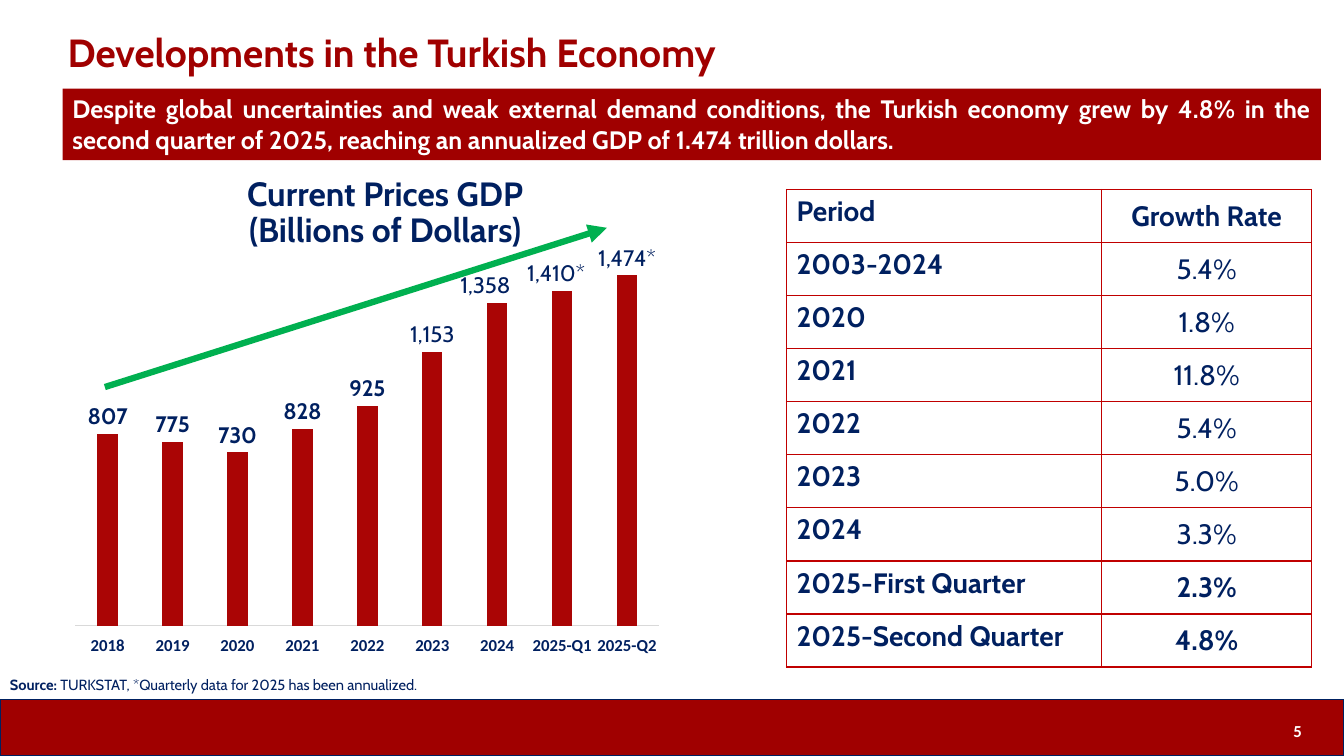
from lxml import etree
from pptx import Presentation
from pptx.chart.data import CategoryChartData
from pptx.dml.color import RGBColor
from pptx.enum.chart import XL_CHART_TYPE, XL_LABEL_POSITION, XL_TICK_LABEL_POSITION, XL_TICK_MARK
from pptx.enum.shapes import MSO_CONNECTOR, MSO_SHAPE
from pptx.enum.text import MSO_ANCHOR, PP_ALIGN
from pptx.oxml import parse_xml
from pptx.oxml.ns import nsdecls, qn
from pptx.util import Inches, Pt

COLUMN = XL_CHART_TYPE.COLUMN_CLUSTERED
ABOVE = XL_LABEL_POSITION.OUTSIDE_END
LOW = XL_TICK_LABEL_POSITION.LOW
NO_TICK = XL_TICK_MARK.NONE
STRAIGHT = MSO_CONNECTOR.STRAIGHT
RECT, TAB = MSO_SHAPE.RECTANGLE, MSO_SHAPE.ROUND_2_SAME_RECTANGLE
TOP, MIDDLE = MSO_ANCHOR.TOP, MSO_ANCHOR.MIDDLE
LEFT, CENTER, JUSTIFY = PP_ALIGN.LEFT, PP_ALIGN.CENTER, PP_ALIGN.JUSTIFY

COLORS = {"red": "A00000", "bar": "AA0505", "grid": "C00000", "navy": "002060",
          "green": "00B050", "axis": "D9D9D9", "white": "FFFFFF"}
HEAD, BODY = "Cabin", "Calibri"

GDP = [("2018", 807), ("2019", 775), ("2020", 730), ("2021", 828), ("2022", 925),
       ("2023", 1153), ("2024", 1358), ("2025-Q1", 1410), ("2025-Q2", 1474)]
NOTES = {5: "1,153", 6: "1,358", 7: "1,410*", 8: "1,474*"}
SHIFTS = {6: -0.02, 7: -0.01}
RATES = [("Period", "Growth Rate"), ("2003-2024", "5.4%"), ("2020", "1.8%"),
         ("2021", "11.8%"), ("2022", "5.4%"), ("2023", "5.0%"), ("2024", "3.3%"),
         ("2025-First Quarter", "2.3%"), ("2025-Second Quarter", "4.8%")]


def color(name):
    return RGBColor.from_string(COLORS[name])


def style(font, size, tint="navy", bold=True, face=HEAD):
    font.size, font.bold, font.name = Pt(size), bold, face
    font.color.rgb = color(tint)


def write(frame, text, size, tint="navy", bold=True, face=HEAD,
          align=LEFT, anchor=TOP, space=None):
    frame.word_wrap = True
    frame.vertical_anchor = anchor
    para = frame.paragraphs[0]
    para.text = text
    para.alignment = align
    para.line_spacing = space
    for run in para.runs:
        style(run.font, size, tint, bold, face)
    return para


def add_text(slide, box, text, size, **look):
    frame = slide.shapes.add_textbox(*map(Inches, box)).text_frame
    return write(frame, text, size, **look)


def add_block(slide, kind, box, fill=None, line=None):
    shape = slide.shapes.add_shape(kind, *map(Inches, box))
    shape.shadow.inherit = False
    if fill:
        shape.fill.solid()
        shape.fill.fore_color.rgb = color(fill)
    else:
        shape.fill.background()
    if line:
        shape.line.color.rgb = color(line)
        shape.line.width = Pt(1)
    else:
        shape.line.fill.background()
    return shape


def add_foot(slide, box, page):
    x, y, w, h = box
    add_block(slide, RECT, box, "red", "navy")
    tab = add_block(slide, TAB, (x + w - 0.7, y, 0.48, h + 0.03))
    write(tab.text_frame, page, 12, "white", face=BODY, align=CENTER, anchor=MIDDLE)


def add_head(slide, box):
    x, y, w, h = box
    title = slide.shapes.add_textbox(*map(Inches, (x, y, 8.62, 1.08)))
    frame = title.text_frame
    frame.margin_left = frame.margin_right = Inches(0.05)
    write(frame, "Developments in the Turkish Economy", 28, "red", anchor=MIDDLE, space=0.9)
    band = add_block(slide, RECT, (x, y + 0.88, w, h - 0.88), "red")
    write(band.text_frame, "Despite global uncertainties and weak external demand conditions, "
          "the Turkish economy grew by 4.8% in the second quarter of 2025, reaching an "
          "annualized GDP of 1.474 trillion dollars.", 18, "white", align=JUSTIFY)


def add_arrow(slide, start, end):
    arrow = slide.shapes.add_connector(STRAIGHT, *map(Inches, start + end))
    arrow.line.color.rgb = color("green")
    arrow.line.width = Pt(4.5)
    etree.SubElement(arrow.line._get_or_add_ln(), qn("a:tailEnd"), type="triangle")
    etree.SubElement(arrow._element.spPr, qn("a:effectLst"))


def add_edges(cell):
    props = cell._tc.get_or_add_tcPr()
    for place, side in enumerate(("lnL", "lnR", "lnT", "lnB")):
        props.insert(place, parse_xml(
            f'<a:{side} {nsdecls("a")} w="12700"><a:solidFill>'
            f'<a:srgbClr val="{COLORS["grid"]}"/></a:solidFill></a:{side}>'))


def add_rates(slide, box):
    x, y, w, h = box
    table = slide.shapes.add_table(len(RATES), 2, *map(Inches, box)).table
    table.first_row = table.horz_banding = False
    table.columns[0].width = Inches(w * 0.6)
    table.columns[1].width = Inches(w * 0.4)
    for r, pair in enumerate(RATES):
        table.rows[r].height = Inches(h / len(RATES))
        for c, text in enumerate(pair):
            cell = table.cell(r, c)
            cell.fill.background()
            bold = c == 0 or r == 0 or r >= 7
            write(cell.text_frame, text, 20, bold=bold, align=CENTER if c else LEFT)
            cell.vertical_anchor = MIDDLE if c else TOP
            if c and r:
                cell.margin_left = cell.margin_right = cell.margin_top = Inches(0.01)
                cell.margin_bottom = 0
            add_edges(cell)


def set_plot(chart):
    area = chart._chartSpace.chart.plotArea
    for old in area.findall(qn("c:layout")):
        area.remove(old)
    area.insert(0, parse_xml(
        f'<c:layout {nsdecls("c")}><c:manualLayout><c:layoutTarget val="inner"/>'
        '<c:xMode val="edge"/><c:yMode val="edge"/><c:x val="0"/><c:y val="0.04"/>'
        '<c:w val="0.98"/><c:h val="0.86"/></c:manualLayout></c:layout>'))


def add_labels(series):
    labels = series.data_labels
    labels.show_value = True
    labels.number_format = "#,##0"
    labels.number_format_is_linked = False
    labels.position = ABOVE
    style(labels.font, 16)
    for spot, text in NOTES.items():
        label = series.points[spot].data_label
        label.text_frame.text = text
        style(label.text_frame.paragraphs[0].runs[0].font, 16, bold=False)
        label.position = ABOVE
    for item in labels._element.findall(qn("c:dLbl")):
        idx = item.find(qn("c:idx"))
        shift = SHIFTS.get(int(idx.get("val")))
        if shift:
            idx.addnext(parse_xml(
                f'<c:layout {nsdecls("c")}><c:manualLayout><c:x val="{shift}"/>'
                '<c:y val="0"/></c:manualLayout></c:layout>'))


def add_gdp(slide, box):
    x, y, w, h = box
    data = CategoryChartData()
    data.categories = [name for name, _ in GDP]
    data.add_series("GDP", [value for _, value in GDP])
    chart = slide.shapes.add_chart(COLUMN, *map(Inches, box), data).chart
    chart.has_legend = chart.has_title = False
    style(chart.font, 10, bold=False, face=BODY)
    plot = chart.plots[0]
    plot.gap_width, plot.overlap, plot.vary_by_categories = 219, -27, False
    bars = plot.series[0]
    bars.format.fill.solid()
    bars.format.fill.fore_color.rgb = color("bar")
    add_labels(bars)
    axis = chart.category_axis
    axis.major_tick_mark = NO_TICK
    axis.tick_label_position = LOW
    axis.format.line.color.rgb = color("axis")
    axis.format.line.width = Pt(0.75)
    style(axis.tick_labels.font, 12, face=BODY)
    scale = chart.value_axis
    scale.minimum_scale, scale.maximum_scale = 0, 1600
    scale.has_major_gridlines = scale.visible = False
    set_plot(chart)
    add_text(slide, (x + 1.15, y - 0.55, 3.86, 0.81),
             "Current Prices GDP (Billions of Dollars)", 24, align=CENTER, space=0.9)


def add_source(slide, box):
    para = add_text(slide, box, "Source: ", 10.5, anchor=MIDDLE, space=0.9)
    run = para.add_run()
    run.text = "TURKSTAT, *Quarterly data for 2025 has been annualized."
    style(run.font, 10.5, bold=False)


def main():
    deck = Presentation()
    deck.slide_width, deck.slide_height = Inches(13.33), Inches(7.5)
    slide = deck.slides.add_slide(deck.slide_layouts[6])
    add_foot(slide, (0, 6.94, 13.33, 0.56), "5")
    add_arrow(slide, (1.04, 3.84), (6.02, 2.26))
    add_head(slide, (0.62, 0, 12.48, 1.59))
    add_rates(slide, (7.8, 1.88, 5.21, 4.74))
    add_source(slide, (0, 6.65, 4.95, 0.3))
    add_gdp(slide, (0.74, 2.26, 5.92, 4.39))
    deck.save("out.pptx")


if __name__ == "__main__":
    main()
